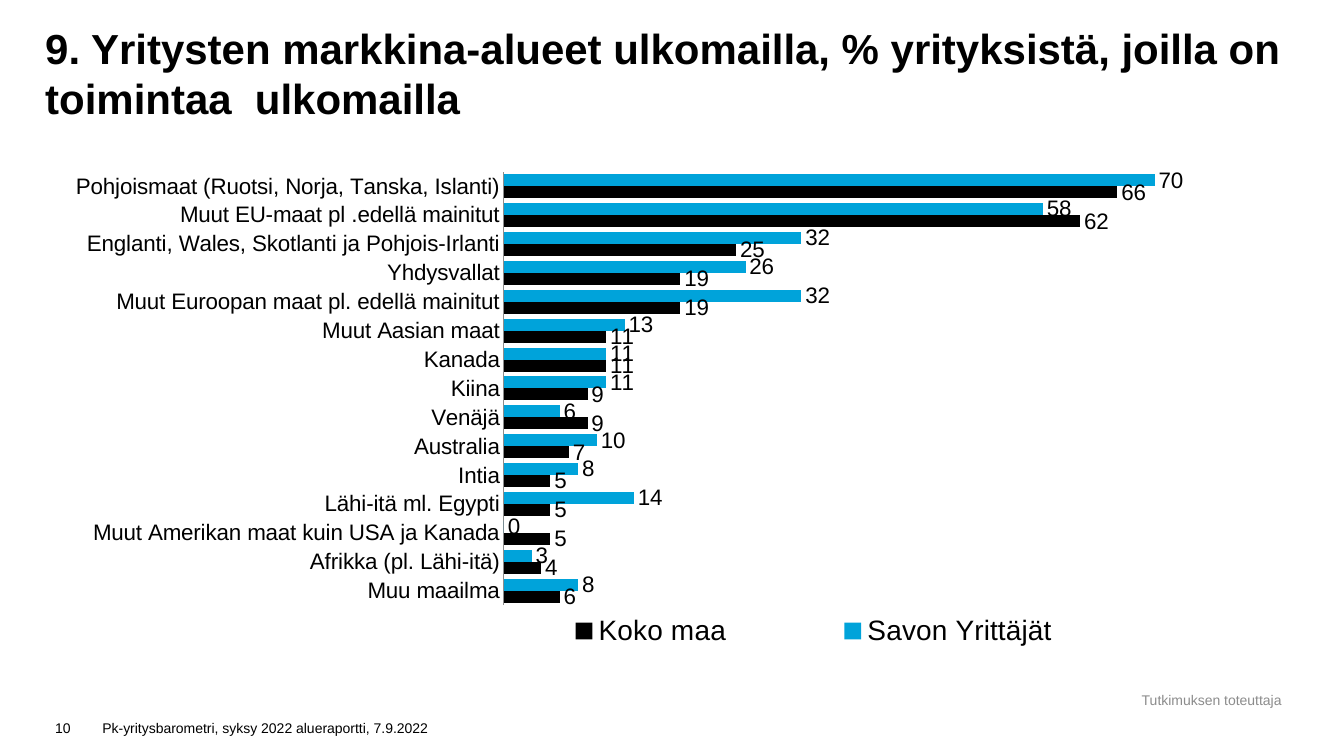
from dataclasses import dataclass

from lxml import etree
from pptx import Presentation
from pptx.chart.data import CategoryChartData
from pptx.dml.color import RGBColor
from pptx.enum.chart import XL_CHART_TYPE, XL_LABEL_POSITION, XL_LEGEND_POSITION, XL_TICK_MARK
from pptx.enum.text import MSO_ANCHOR, MSO_AUTO_SIZE, PP_ALIGN
from pptx.oxml.ns import qn
from pptx.util import Cm, Pt

BAR_CLUSTERED = XL_CHART_TYPE.BAR_CLUSTERED
OUTSIDE_END = XL_LABEL_POSITION.OUTSIDE_END
LEGEND_RIGHT = XL_LEGEND_POSITION.RIGHT
NO_TICK = XL_TICK_MARK.NONE
MIDDLE, BOTTOM = MSO_ANCHOR.MIDDLE, MSO_ANCHOR.BOTTOM
NO_AUTOFIT = MSO_AUTO_SIZE.NONE
LEFT, CENTER = PP_ALIGN.LEFT, PP_ALIGN.CENTER
TITLE_ONLY = 5


@dataclass(frozen=True)
class Theme:
    """Colours, font and type sizes of the slide."""
    font: str = "Arial"
    black: RGBColor = RGBColor(0, 0, 0)
    blue: RGBColor = RGBColor(0, 0xA3, 0xDA)
    grey: RGBColor = RGBColor(0x8C, 0x8C, 0x8C)
    title: Pt = Pt(30)
    legend: Pt = Pt(20)
    label: Pt = Pt(16)
    small: Pt = Pt(10)


THEME = Theme()

MARKETS = [
    ("Pohjoismaat (Ruotsi, Norja, Tanska, Islanti)", 70, 66),
    ("Muut EU-maat pl .edellä mainitut", 58, 62),
    ("Englanti, Wales, Skotlanti ja Pohjois-Irlanti", 32, 25),
    ("Yhdysvallat", 26, 19),
    ("Muut Euroopan maat pl. edellä mainitut", 32, 19),
    ("Muut Aasian maat", 13, 11),
    ("Kanada", 11, 11),
    ("Kiina", 11, 9),
    ("Venäjä", 6, 9),
    ("Australia", 10, 7),
    ("Intia", 8, 5),
    ("Lähi-itä ml. Egypti", 14, 5),
    ("Muut Amerikan maat kuin USA ja Kanada", 0, 5),
    ("Afrikka (pl. Lähi-itä)", 3, 4),
    ("Muu maailma", 8, 6),
]


def style_font(font, size, color=THEME.black, bold=False):
    """Apply the theme font with a size, colour and weight."""
    font.name, font.size, font.bold = THEME.font, size, bold
    font.color.rgb = color


def add_title(page, left, top, width, height):
    """Fill the title placeholder in the given box."""
    title = page.shapes.title
    title.left, title.top, title.width, title.height = left, top, width, height
    frame = title.text_frame
    frame.margin_left = frame.margin_top = frame.margin_right = frame.margin_bottom = 0
    frame.word_wrap, frame.auto_size, frame.vertical_anchor = True, NO_AUTOFIT, BOTTOM
    para = frame.paragraphs[0]
    para.text = "9. Yritysten markkina-alueet ulkomailla, % yrityksistä, joilla on toimintaa  ulkomailla"
    para.alignment = LEFT
    style_font(para.font, THEME.title, bold=True)


def add_note(page, text, left, top, width, height, anchor=BOTTOM, align=LEFT, color=THEME.black):
    """Add one small line of text in the given box."""
    frame = page.shapes.add_textbox(left, top, width, height).text_frame
    frame.word_wrap, frame.vertical_anchor = True, anchor
    para = frame.paragraphs[0]
    para.text, para.alignment = text, align
    style_font(para.font, THEME.small, color)


def add_footer(page, left, top, width, height):
    """Place the page number, the report name and the credit line in the box."""
    number_width = Cm(1.19)
    line_height = Cm(0.89)
    line_top = top + height - line_height
    credit_width = Cm(4.39)
    add_note(page, "10", left, line_top, number_width, line_height)
    add_note(page, "Pk-yritysbarometri, syksy 2022 alueraportti, 7.9.2022",
             left + number_width, line_top, Cm(10.59), line_height)
    add_note(page, "Tutkimuksen toteuttaja", left + width - credit_width + Cm(0.35), top,
             credit_width, Cm(0.66), MIDDLE, CENTER, THEME.grey)


def set_layout(element, index, x, y, w, h, inner=False):
    """Give a chart part a manual layout in fractions of the chart."""
    for old in element.findall(qn("c:layout")):
        element.remove(old)
    layout = etree.Element(qn("c:layout"))
    element.insert(index, layout)
    manual = etree.SubElement(layout, qn("c:manualLayout"))
    settings = [("layoutTarget", "inner")] if inner else []
    settings += [("xMode", "edge"), ("yMode", "edge"), ("x", x), ("y", y), ("w", w), ("h", h)]
    for name, value in settings:
        etree.SubElement(manual, qn(f"c:{name}")).set("val", str(value))


def add_market_chart(page, left, top, width, height):
    """Add the clustered bars of market areas in the given box."""
    names, region, country = zip(*MARKETS)
    data = CategoryChartData(number_format="#,##0")
    data.categories = names
    data.add_series("Savon Yrittäjät", region)
    data.add_series("Koko maa", country)
    chart = page.shapes.add_chart(BAR_CLUSTERED, left, top, width, height, data).chart
    chart.has_title = False
    style_font(chart.font, THEME.legend)

    plot = chart.plots[0]
    plot.gap_width, plot.overlap, plot.vary_by_categories = 40, 0, False
    for series, color in zip(plot.series, (THEME.blue, THEME.black)):
        series.format.fill.solid()
        series.format.fill.fore_color.rgb = color
        labels = series.data_labels
        labels.show_value, labels.position = True, OUTSIDE_END
        labels.number_format, labels.number_format_is_linked = "#,##0", False
        style_font(labels.font, THEME.label)

    category_axis, value_axis = chart.category_axis, chart.value_axis
    category_axis.reverse_order = True
    category_axis.major_tick_mark = category_axis.minor_tick_mark = NO_TICK
    category_axis.format.line.color.rgb = THEME.grey
    category_axis.format.line.width = Pt(0.75)
    style_font(category_axis.tick_labels.font, THEME.label)
    value_axis.minimum_scale, value_axis.maximum_scale = 0, 80
    value_axis.has_major_gridlines = value_axis.visible = False

    chart.has_legend = True
    legend = chart.legend
    legend.position, legend.include_in_layout = LEGEND_RIGHT, False
    style_font(legend.font, THEME.legend)
    plot_area = category_axis._element.getparent()
    set_layout(plot_area, 0, 0.37, 0.03, 0.6, 0.84, inner=True)
    set_layout(legend._element, 1, 0.34, 0.87, 0.56, 0.1)


def main():
    """Build the slide and save the deck."""
    deck = Presentation()
    deck.slide_width, deck.slide_height = Cm(33.87), Cm(19.05)
    page = deck.slides.add_slide(deck.slide_layouts[TITLE_ONLY])
    left, width = Cm(1.14), Cm(31.24)
    add_title(page, left, 0, width, Cm(3.1))
    add_market_chart(page, left, Cm(3.94), width, Cm(13))
    add_footer(page, left, Cm(17.32), width, Cm(1.35))
    deck.save("out.pptx")


if __name__ == "__main__":
    main()
